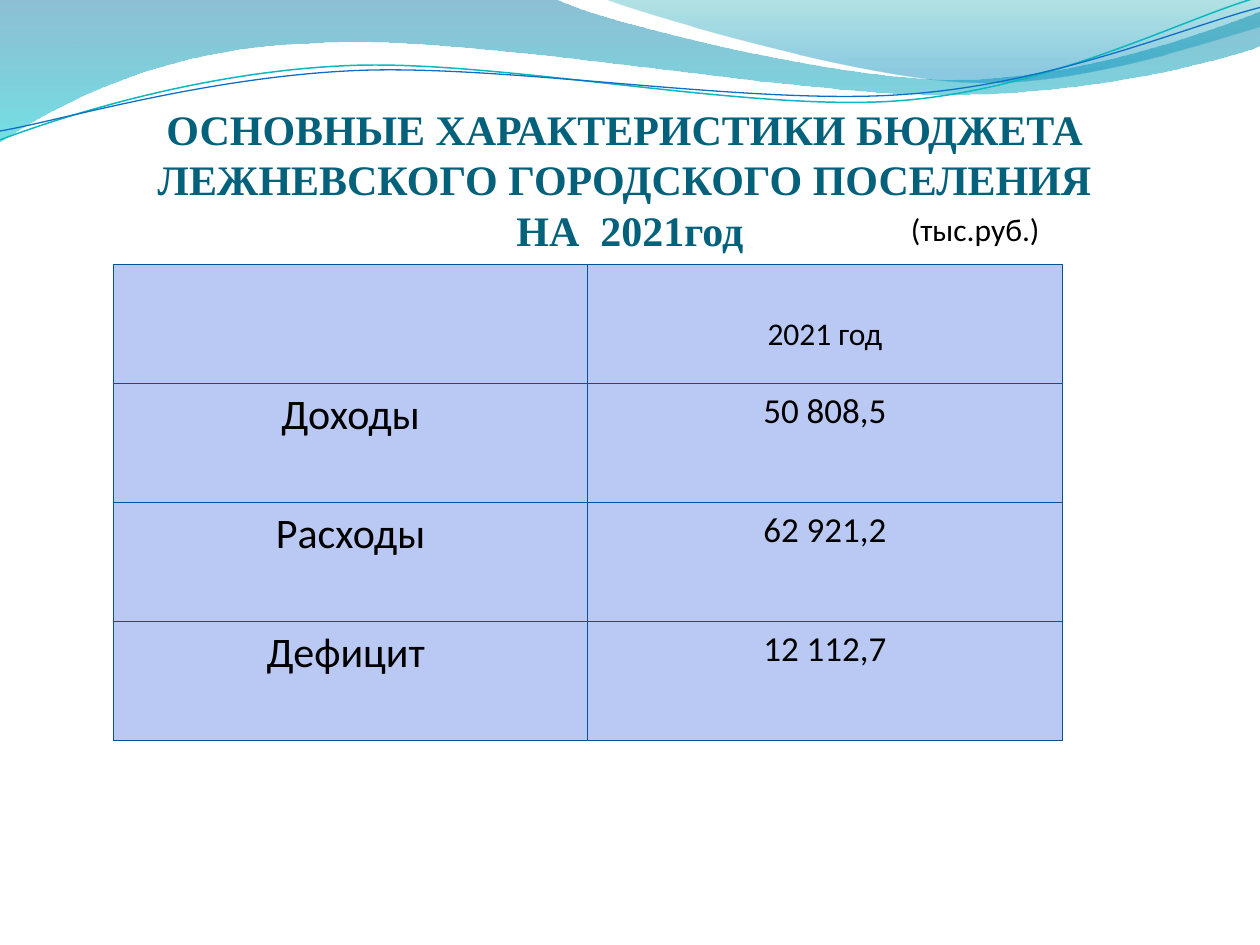
from dataclasses import dataclass
from math import cos, radians, sin

from lxml.etree import SubElement
from pptx import Presentation
from pptx.dml.color import RGBColor
from pptx.enum.text import MSO_ANCHOR, PP_ALIGN
from pptx.oxml.ns import qn
from pptx.util import Inches, Pt

COLORS = {
    "title": "04617B", "text": "000000", "cell": "BAC9F3", "border": "095295",
    "deep": "0074A1", "cyan": "00C6CF", "teal": "00A1A9", "sky": "008BBF",
    "teal_line": "0AB8BF", "blue_line": "0F6FC6",
}
TILT = 2.7
Point = tuple[float, float]


@dataclass
class Stop:
    color: str
    position: float
    opacity: int


@dataclass
class Wave:
    """Segments hold one point for a line or three for a Bezier curve."""
    start: Point
    segments: list[tuple[Point, ...]]
    stops: tuple[Stop, ...] = ()
    line: str = ""
    width: float = 0
    pivot: Point | None = None


@dataclass
class Row:
    label: str
    amount: str
    amount_size: int = 20
    top_margin: float = 0.05


WAVES = [
    Wave((0, 0), [
        ((4.4, -0.01),),
        ((4.76, 0.17), (6.64, 0.63), (7.58, 0.63)),
        ((8.53, 0.63), (9.58, 0.26), (10, 0.09)),
        ((10.01, 0.36),),
        ((9.83, 0.44), (8.7, 0.76), (7.46, 0.75)),
        ((6.22, 0.75), (3.82, 0.28), (2.57, 0.34)),
        ((1.29, 0.36), (0.46, 0.83), (-0.01, 1.13)),
        ((0, 0),),
    ], stops=(Stop("deep", 0, 45), Stop("cyan", 1, 55))),
    Wave((4.79, -0.01), [
        ((5.09, 0.11), (6.82, 0.62), (7.69, 0.65)),
        ((8.56, 0.69), (9.61, 0.32), (10, 0.21)),
        ((10, 0),),
        ((4.79, -0.01),),
    ], stops=(Stop("teal", 0, 30), Stop("sky", 0.8, 45))),
    Wave((0, 1.11), [
        ((0.48, 0.93), (1.58, 0.57), (2.77, 0.52)),
        ((3.95, 0.47), (5.93, 0.89), (7.13, 0.8)),
        ((8.33, 0.71), (9.38, 0.15), (9.98, -0.02)),
    ], line="teal_line", width=0.85, pivot=(4.99, 0.58)),
    Wave((0, 1.04), [
        ((0.47, 0.96), (1.64, 0.61), (2.83, 0.56)),
        ((4.03, 0.51), (5.97, 0.84), (7.17, 0.75)),
        ((8.36, 0.67), (9.41, 0.21), (10, 0.06)),
    ], line="blue_line", width=0.75, pivot=(5, 0.59)),
]
ROWS = [
    Row("", "2021 год", 18, 0.4),
    Row("Доходы", "50 808,5"),
    Row("Расходы", "62 921,2"),
    Row("Дефицит ", "12 112,7"),
]


def rgb(color: str) -> RGBColor:
    return RGBColor.from_string(COLORS[color])


def level(point: Point, pivot: Point | None) -> Point:
    if pivot is None:
        return point
    x, y = point[0] - pivot[0], point[1] - pivot[1]
    c, s = cos(radians(TILT)), sin(radians(TILT))
    return pivot[0] + x * c - y * s, pivot[1] + x * s + y * c


def bend(shape, segments: list[tuple[Point, ...]]) -> None:
    lines = shape._element.iter(qn("a:lnTo"))
    steps = iter(list(lines))
    for segment in segments:
        first, *others = [next(steps) for _ in segment]
        if others:
            first.tag = qn("a:cubicBezTo")
            for other in others:
                first.append(other[0])
                other.getparent().remove(other)


def draw_wave(slide, wave: Wave) -> None:
    points = [wave.start] + [point for segment in wave.segments for point in segment]
    emu = [(Inches(x), Inches(y)) for x, y in (level(point, wave.pivot) for point in points)]
    builder = slide.shapes.build_freeform(*emu[0])
    builder.add_line_segments(emu[1:], close=bool(wave.stops))
    shape = builder.convert_to_shape()
    bend(shape, wave.segments)
    shape.shadow.inherit = False
    if not wave.stops:
        shape.rotation = 360 - TILT
        shape.fill.background()
        shape.line.color.rgb = rgb(wave.line)
        shape.line.width = Pt(wave.width)
        return
    shape.line.fill.background()
    shape.fill.gradient()
    shape.fill.gradient_angle = 270
    for target, stop in zip(shape.fill.gradient_stops, wave.stops):
        target.color.rgb = rgb(stop.color)
        target.position = stop.position
    for element, stop in zip(shape._element.spPr.iter(qn("a:srgbClr")), wave.stops):
        SubElement(element, qn("a:alpha"), val=str(stop.opacity * 1000))


def style(paragraph, size: int, color: str = "text", font: str = "Calibri", bold: bool = False) -> None:
    paragraph.font.size = Pt(size)
    paragraph.font.name = font
    paragraph.font.bold = bold
    paragraph.font.color.rgb = rgb(color)


def fill_cell(cell, text: str, size: int, top_margin: float) -> None:
    cell.text = text
    cell.margin_top = Inches(top_margin)
    paragraph = cell.text_frame.paragraphs[0]
    paragraph.alignment = PP_ALIGN.CENTER
    style(paragraph, size)
    properties = cell._tc.get_or_add_tcPr()
    for side in ("a:lnL", "a:lnR", "a:lnT", "a:lnB"):
        border = SubElement(properties, qn(side), w=str(Pt(0.75)))
        solid = SubElement(border, qn("a:solidFill"))
        SubElement(solid, qn("a:srgbClr"), val=COLORS["border"])
    cell.fill.solid()
    cell.fill.fore_color.rgb = rgb("cell")


def draw_budget(slide, rows: list[Row]) -> None:
    table = slide.shapes.add_table(
        len(rows), 2, Inches(0.9), Inches(2.1), Inches(7.53), Inches(3.78)).table
    for index, row in enumerate(rows):
        fill_cell(table.cell(index, 0), row.label, 24, 0.05)
        fill_cell(table.cell(index, 1), row.amount, row.amount_size, row.top_margin)


def draw_title(slide) -> None:
    frame = slide.shapes.add_textbox(Inches(0.5), Inches(0.77), Inches(9), Inches(1.25)).text_frame
    frame.word_wrap = True
    frame.vertical_anchor = MSO_ANCHOR.BOTTOM
    frame.margin_left = frame.margin_right = frame.margin_bottom = 0
    frame.text = "ОСНОВНЫЕ ХАРАКТЕРИСТИКИ БЮДЖЕТА \vЛЕЖНЕВСКОГО ГОРОДСКОГО ПОСЕЛЕНИЯ \vНА  2021год"
    frame.paragraphs[0].alignment = PP_ALIGN.CENTER
    style(frame.paragraphs[0], 24, "title", "Times New Roman", True)


def draw_unit(slide) -> None:
    frame = slide.shapes.add_textbox(Inches(7.13), Inches(1.62), Inches(1.81), Inches(0.4)).text_frame
    frame.word_wrap = True
    frame.text = "(тыс.руб.)"
    style(frame.paragraphs[0], 18)


def main() -> None:
    deck = Presentation()
    deck.slide_width, deck.slide_height = Inches(10), Inches(7.5)
    slide = deck.slides.add_slide(deck.slide_layouts[6])
    for wave in WAVES:
        draw_wave(slide, wave)
    draw_title(slide)
    draw_budget(slide, ROWS)
    draw_unit(slide)
    deck.save("out.pptx")


if __name__ == "__main__":
    main()
